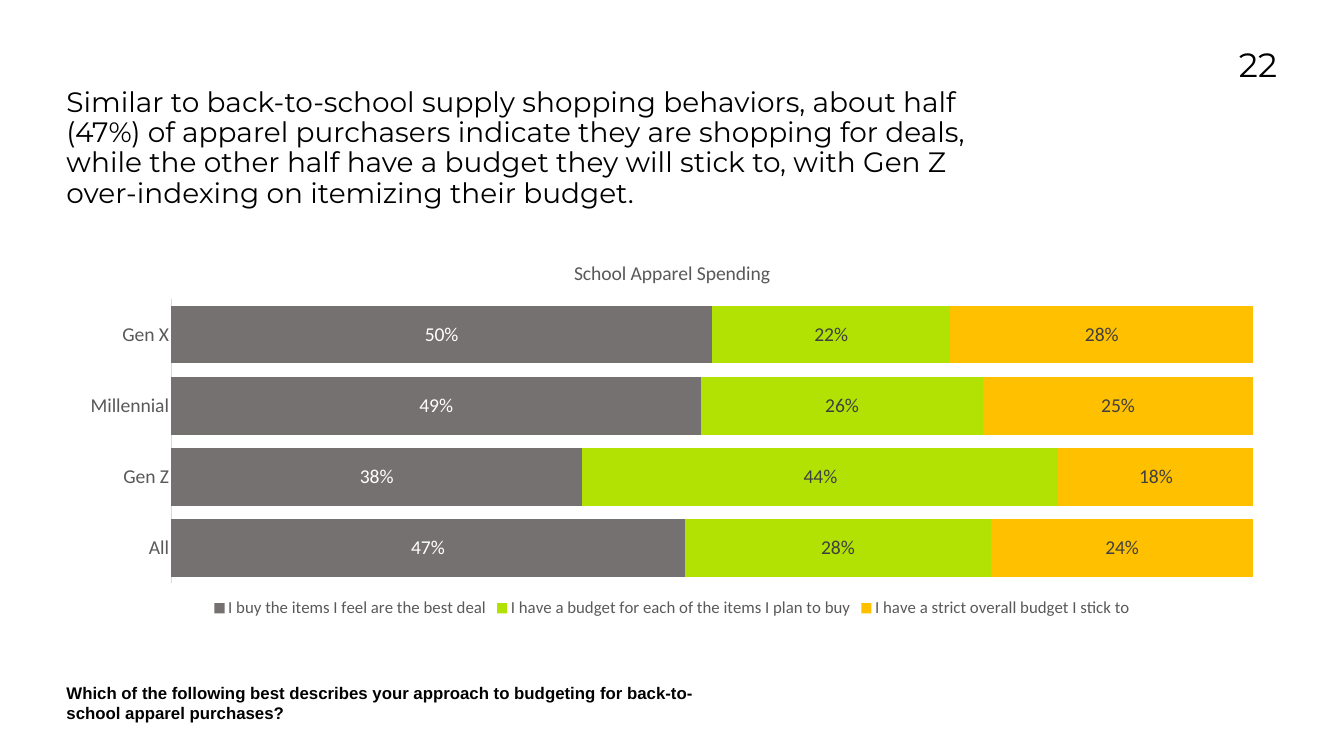
from pptx import Presentation
from pptx.chart.data import CategoryChartData
from pptx.dml.color import RGBColor
from pptx.enum.chart import (XL_CHART_TYPE, XL_LABEL_POSITION, XL_LEGEND_POSITION,
                             XL_TICK_LABEL_POSITION, XL_TICK_MARK)
from pptx.enum.text import MSO_ANCHOR, MSO_AUTO_SIZE, PP_ALIGN
from pptx.util import Pt

BLACK = RGBColor(0x00, 0x00, 0x00)
WHITE = RGBColor(0xFF, 0xFF, 0xFF)
DARK_GRAY = RGBColor(0x40, 0x40, 0x40)
TEXT_GRAY = RGBColor(0x59, 0x59, 0x59)
AXIS_GRAY = RGBColor(0xD9, 0xD9, 0xD9)
BAR_GRAY = RGBColor(0x76, 0x71, 0x71)
LIME = RGBColor(0xB2, 0xE2, 0x03)
AMBER = RGBColor(0xFF, 0xC0, 0x00)

LEFT, RIGHT = PP_ALIGN.LEFT, PP_ALIGN.RIGHT
MARGIN = Pt(95)
CHART_FONT = "Calibri"


def write(box, text, font, size, bold=False, align=LEFT, spacing=1.0):
    """Fill a text shape with one paragraph, flush with the box edges."""
    frame = box.text_frame
    frame.word_wrap = True
    frame.auto_size = MSO_AUTO_SIZE.NONE
    frame.vertical_anchor = MSO_ANCHOR.TOP
    frame.margin_left = frame.margin_right = frame.margin_top = frame.margin_bottom = 0
    para = frame.paragraphs[0]
    para.alignment = align
    para.line_spacing = spacing
    span = para.add_run()
    span.text = text
    style(span.font, size, BLACK, font)
    span.font.bold = bold


def style(font, size, color, name=CHART_FONT):
    font.name = name
    font.size = Pt(size)
    font.color.rgb = color
    font.bold = False


deck = Presentation()
deck.slide_width, deck.slide_height = Pt(1920), Pt(1080)
page = deck.slides.add_slide(deck.slide_layouts[5])

# Headline
headline = page.shapes.title
headline.left, headline.top, headline.width, headline.height = MARGIN, Pt(126), Pt(1349), Pt(150)
write(headline,
      "Similar to back-to-school supply shopping behaviors, about half (47%) of apparel "
      "purchasers indicate they are shopping for deals, while the other half have a budget "
      "they will stick to, with Gen Z over-indexing on itemizing their budget.",
      "Montserrat", 40, spacing=0.9)

# Survey question and page number
question = page.shapes.add_textbox(MARGIN, Pt(975.6), Pt(955.5), Pt(47))
write(question,
      "Which of the following best describes your approach to budgeting for "
      "back-to-school apparel purchases?", "Arial", 24, bold=True)
page_number = page.shapes.add_textbox(Pt(1662.5), Pt(63.4), Pt(162), Pt(118))
write(page_number, "22", "Montserrat", 48, align=RIGHT)

# Chart data: name, values, bar colour, label colour
answers = [
    ("I buy the items I feel are the best deal", (0.47, 0.38, 0.49, 0.50), BAR_GRAY, WHITE),
    ("I have a budget for each of the items I plan to buy", (0.28, 0.44, 0.26, 0.22),
     LIME, DARK_GRAY),
    ("I have a strict overall budget I stick to", (0.24, 0.18, 0.25, 0.28), AMBER, DARK_GRAY),
]
data = CategoryChartData(number_format="0%")
data.categories = ["All", "Gen Z", "Millennial", "Gen X"]
for name, values, _, _ in answers:
    data.add_series(name, values)
chart = page.shapes.add_chart(XL_CHART_TYPE.BAR_STACKED_100, MARGIN, Pt(351.4),
                              Pt(1730), Pt(537), data).chart
style(chart.font, 20, BLACK)

# Chart title and legend
chart.has_title = True
title_para = chart.chart_title.text_frame.paragraphs[0]
title_span = title_para.add_run()
title_span.text = "School Apparel Spending"
style(title_span.font, 28, TEXT_GRAY)
chart.chart_title.include_in_layout = False
chart.has_legend = True
chart.legend.position = XL_LEGEND_POSITION.BOTTOM
chart.legend.include_in_layout = False
style(chart.legend.font, 24, TEXT_GRAY)

# Axes
generations = chart.category_axis
generations.major_tick_mark = generations.minor_tick_mark = XL_TICK_MARK.NONE
generations.tick_label_position = XL_TICK_LABEL_POSITION.NEXT_TO_AXIS
generations.format.line.color.rgb = AXIS_GRAY
generations.format.line.width = Pt(0.75)
style(generations.tick_labels.font, 28, TEXT_GRAY)
shares = chart.value_axis
shares.has_major_gridlines = False
shares.visible = False
shares.minimum_scale, shares.maximum_scale = 0, 1

# Bars and their labels
plot = chart.plots[0]
plot.gap_width, plot.overlap = 23, 100
plot.vary_by_categories = False
for series, (_, _, bar_color, label_color) in zip(plot.series, answers):
    series.format.fill.solid()
    series.format.fill.fore_color.rgb = bar_color
    labels = series.data_labels
    labels.show_value = True
    labels.position = XL_LABEL_POSITION.CENTER
    labels.number_format = "0%"
    labels.number_format_is_linked = False
    style(labels.font, 28, label_color)

deck.save("out.pptx")
